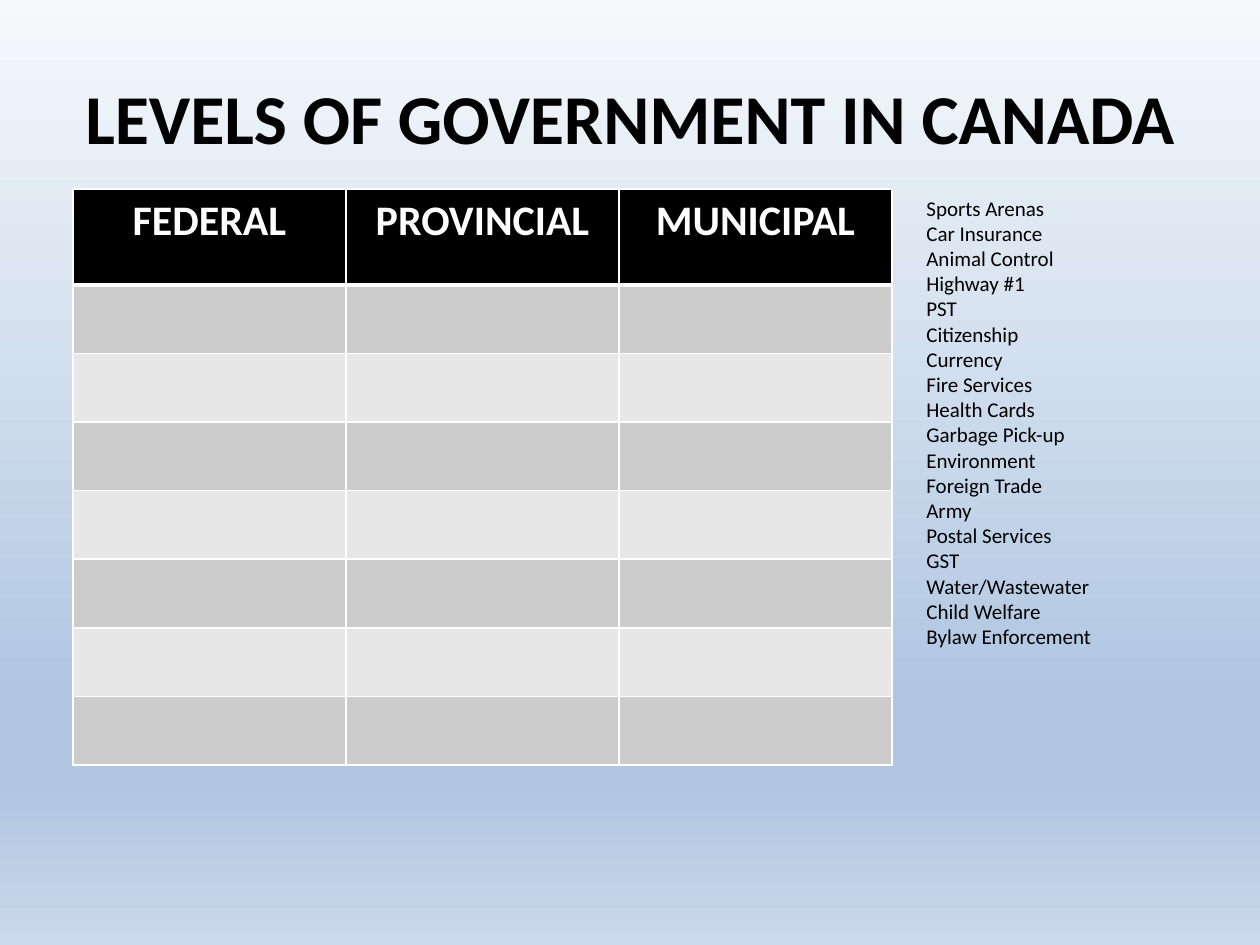
from lxml import etree
from pptx import Presentation
from pptx.dml.color import RGBColor
from pptx.enum.text import MSO_ANCHOR, PP_ALIGN
from pptx.oxml.ns import qn
from pptx.util import Emu, Pt

LEFT, CENTER = PP_ALIGN.LEFT, PP_ALIGN.CENTER
TOP, MIDDLE = MSO_ANCHOR.TOP, MSO_ANCHOR.MIDDLE
PX_PER_INCH = 126
BLACK, WHITE = "000000", "FFFFFF"
BANDS = ["CCCCCC", "E7E7E7"]
BACKDROP = [(0, "F6F9FC"), (74, "B0C6E1"), (83, "B0C6E1"), (100, "CAD9EB")]
LEVELS = ["FEDERAL", "PROVINCIAL", "MUNICIPAL"]
SERVICES = [
    "Sports Arenas", "Car Insurance", "Animal Control", "Highway #1", "PST",
    "Citizenship", "Currency", "Fire Services", "Health Cards",
    "Garbage Pick-up", "Environment", "Foreign Trade", "Army",
    "Postal Services", "GST", "Water/Wastewater", "Child Welfare",
    "Bylaw Enforcement",
]
ANSWER_ROWS = 7


def px(length):
    return Emu(round(length * 914400 / PX_PER_INCH))


def color(value):
    return RGBColor.from_string(value)


class SlideBuilder:
    font = "Calibri"

    def __init__(self, slide):
        self.slide = slide

    def background(self, stops):
        fill = self.slide.background.fill
        fill.gradient()
        fill.gradient_angle = 270
        stop_list = self.slide.element.find(".//" + qn("a:gsLst"))
        for default_stop in list(stop_list):
            stop_list.remove(default_stop)
        for percent, value in stops:
            stop = etree.SubElement(stop_list, qn("a:gs"), pos=str(percent * 1000))
            etree.SubElement(stop, qn("a:srgbClr"), val=value)

    def add_lines(self, frame, lines, size, ink=BLACK, bold=False, align=LEFT):
        for index, line in enumerate(lines):
            paragraph = frame.add_paragraph() if index else frame.paragraphs[0]
            paragraph.alignment = align
            run = paragraph.add_run()
            run.text = line
            run.font.name = self.font
            run.font.size = Pt(size)
            run.font.bold = bold
            run.font.color.rgb = color(ink)

    def text(self, left, top, width, height, lines, size, anchor=TOP, **style):
        box = self.slide.shapes.add_textbox(px(left), px(top), px(width), px(height))
        frame = box.text_frame
        frame.word_wrap = True
        frame.vertical_anchor = anchor
        self.add_lines(frame, lines, size, **style)

    def cell(self, cell, fill, top_line, bottom_line):
        properties = cell._tc.get_or_add_tcPr()
        for side, points in zip("LRTB", (1, 1, top_line, bottom_line)):
            border = etree.SubElement(properties, qn("a:ln" + side), w=str(int(Pt(points))))
            solid = etree.SubElement(border, qn("a:solidFill"))
            etree.SubElement(solid, qn("a:srgbClr"), val=WHITE)
        cell.fill.solid()
        cell.fill.fore_color.rgb = color(fill)

    def table(self, left, top, width, header_height, body_height, headings, body_rows):
        table = self.slide.shapes.add_table(
            body_rows + 1, len(headings), px(left), px(top),
            px(width), px(header_height + body_height)).table
        for column in table.columns:
            column.width = px(width / len(headings))
        for index, row in enumerate(table.rows):
            row.height = px(body_height / body_rows if index else header_height)
            fill = BANDS[(index - 1) % len(BANDS)] if index else BLACK
            for cell in row.cells:
                self.cell(cell, fill, 3 if index == 1 else 1, 1 if index else 3)
        for heading, cell in zip(headings, table.rows[0].cells):
            self.add_lines(cell.text_frame, [heading], 24, WHITE, True, CENTER)


def main():
    deck = Presentation()
    deck.slide_width, deck.slide_height = px(1260), px(945)
    builder = SlideBuilder(deck.slides.add_slide(deck.slide_layouts[6]))
    builder.background(BACKDROP)
    builder.text(63, 38, 1134, 158, ["LEVELS OF GOVERNMENT IN CANADA"], 40,
                 anchor=MIDDLE, bold=True, align=CENTER)
    builder.table(73, 189, 819, 96, 480, LEVELS, ANSWER_ROWS)
    builder.text(914, 189, 294, 471, SERVICES, 12)
    deck.save("out.pptx")


if __name__ == "__main__":
    main()
